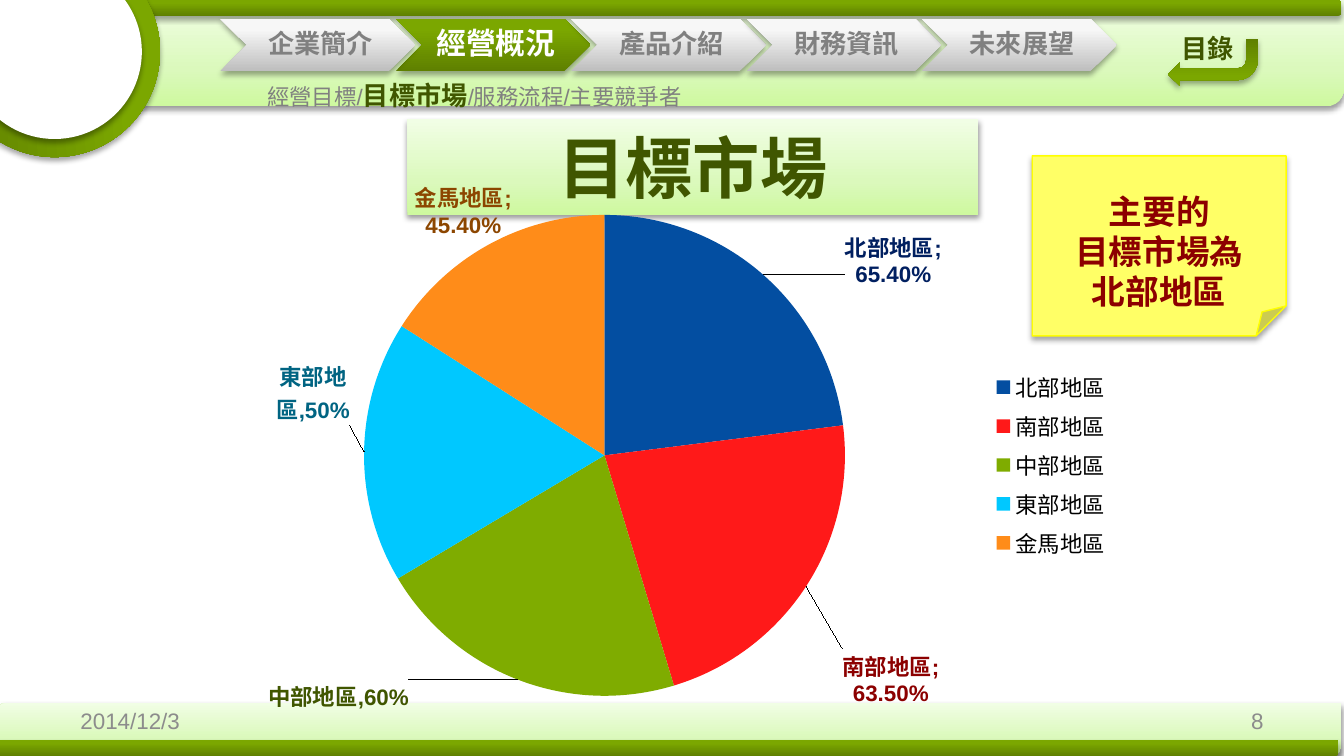
from lxml import etree
from pptx import Presentation
from pptx.chart.data import CategoryChartData
from pptx.dml.color import RGBColor
from pptx.enum import chart as ch, shapes, text
from pptx.oxml import parse_xml
from pptx.oxml.ns import nsdecls, qn
from pptx.util import Pt

WHITE = RGBColor(0xFF, 0xFF, 0xFF)
BLACK = RGBColor(0, 0, 0)
GREY = RGBColor(0x80, 0x80, 0x80)
PALE = RGBColor(0x8C, 0x8C, 0x8C)
MOSS = RGBColor(0x40, 0x56, 0x00)
WINE = RGBColor(0x8C, 0x00, 0x00)
NOTE = RGBColor(0xFF, 0xFF, 0x66)
EDGE = RGBColor(0xFF, 0xFF, 0x00)

GREEN = [(0, RGBColor(0x5F, 0x80, 0x00)), (80, RGBColor(0x7B, 0xA7, 0x00)),
         (100, RGBColor(0x7C, 0xA7, 0x00))]
SILVER = [(0, RGBColor(0xBE, 0xBE, 0xBE)), (80, RGBColor(0xF7, 0xF7, 0xF7)),
          (100, RGBColor(0xF8, 0xF8, 0xF8))]
LIGHT = [(0, RGBColor(0xCE, 0xF9, 0x9F)), (35, RGBColor(0xDB, 0xF9, 0xBC)),
         (100, RGBColor(0xF1, 0xFE, 0xE5))]

ZONES = [
    ("北部地區", 0.654, RGBColor(0x03, 0x4E, 0xA1), RGBColor(0x00, 0x1F, 0x60), (0.085, 0.03), None),
    ("南部地區", 0.635, RGBColor(0xFF, 0x19, 0x19), WINE, (0.033, 0.097), None),
    ("中部地區", 0.6, RGBColor(0x7F, 0xAC, 0x00), MOSS, (-0.118, -0.013), "中部地區,\v60%"),
    ("東部地區", 0.5, RGBColor(0x00, 0xC8, 0xFF), RGBColor(0x00, 0x64, 0x82), (-0.007, -0.1), "東部地區,\v50%"),
    ("金馬地區", 0.454, RGBColor(0xFF, 0x8C, 0x19), RGBColor(0x8C, 0x46, 0x00), (0.03, 0), None),
]
MENU = ["企業簡介", "經營概況", "產品介紹", "財務資訊", "未來展望"]
KIND = shapes.MSO_SHAPE
ALIGN = text.PP_ALIGN


def style(font, size, color, bold=False):
    """Set face, size, colour and weight of a font."""
    font.name, font.size, font.bold = "Arial", Pt(size), bold
    font.color.rgb = color


def say(frame, words, size=12, color=GREY, bold=False, align=ALIGN.LEFT,
        anchor=text.MSO_ANCHOR.MIDDLE, inset=(7.2, 3.6, 7.2, 3.6)):
    """Add formatted words to the first paragraph of a frame."""
    frame.word_wrap = True
    frame.auto_size = text.MSO_AUTO_SIZE.NONE
    frame.vertical_anchor = anchor
    (frame.margin_left, frame.margin_top,
     frame.margin_right, frame.margin_bottom) = map(Pt, inset)
    para = frame.paragraphs[0]
    para.alignment = align
    for i, line in enumerate(words.split("\v")):
        if i:
            para.add_line_break()
        run = para.add_run()
        run.text = line
        style(run.font, size, color, bold)


def paint(shape, fill):
    """Give a shape a plain or graded fill, no line and a soft shadow."""
    props = shape.element.spPr
    shape.line.fill.background()
    if isinstance(fill, RGBColor):
        shape.fill.solid()
        shape.fill.fore_color.rgb = fill
    else:
        stops = "".join(f'<a:gs pos="{at * 1000}"><a:srgbClr val="{tone}"/></a:gs>'
                        for at, tone in fill)
        props.find(qn("a:ln")).addprevious(parse_xml(
            f'<a:gradFill {nsdecls("a")} rotWithShape="1"><a:gsLst>{stops}</a:gsLst>'
            '<a:lin ang="16200000" scaled="0"/></a:gradFill>'))
    alpha, dist = (38, 1.6) if fill is LIGHT else (35, 1.8)
    props.append(parse_xml(
        f'<a:effectLst {nsdecls("a")}><a:outerShdw blurRad="{Pt(3.1)}" dist="{Pt(dist)}" '
        'dir="5400000" rotWithShape="0"><a:srgbClr val="000000">'
        f'<a:alpha val="{alpha * 1000}"/></a:srgbClr></a:outerShdw></a:effectLst>'))


def block(slide, kind, box, fill, turn=0):
    """Add a painted preset shape in a box."""
    shape = slide.shapes.add_shape(kind, *map(Pt, box))
    shape.rotation = turn
    paint(shape, fill)
    return shape


def label(slide, box, words, **form):
    """Add a text box and return its frame."""
    frame = slide.shapes.add_textbox(*map(Pt, box)).text_frame
    say(frame, words, **form)
    return frame


def frame_bands(slide, box):
    """Place the bands and the round badge along the edges of the box."""
    x, y, w, h = box
    block(slide, KIND.ROUND_2_DIAG_RECTANGLE, (x - 1.5, y + h - 28.4, w, 28.4), LIGHT)
    block(slide, KIND.ROUND_2_DIAG_RECTANGLE, (x, y, w, 57), LIGHT)
    for left, top in ((x, y), (x - 1.5, y + h - 8.5)):
        block(slide, KIND.ROUNDED_RECTANGLE, (left, top, w - 1.5, 8.5), GREEN)
    for size, fill in ((113, GREEN), (93.6, WHITE)):
        block(slide, KIND.OVAL, (x + 29.2 - size / 2, y + 27.7 - size / 2, size, size), fill, 86)


def menu(slide, box, live):
    """Place a row of chevrons in the box, the live one at the back."""
    x, y, w, h = box
    step, tip = 93.96, 14.1
    wide = w - step * (len(MENU) - 1)
    for i in sorted(range(len(MENU)), key=lambda n: n != live):
        left, on = x + i * step, i == live
        dots = [(left + wide - tip, y), (left + wide, y + h / 2),
                (left + wide - tip, y + h), (left, y + h), (left + tip, y + h / 2)]
        pen = slide.shapes.build_freeform(Pt(left), Pt(y))
        pen.add_line_segments([(Pt(a), Pt(b)) for a, b in dots], close=True)
        shape = pen.convert_to_shape()
        paint(shape, GREEN if on else SILVER)
        say(shape.text_frame, MENU[i], size=16 if on else 14, color=WHITE if on else GREY,
            bold=True, align=ALIGN.CENTER, inset=(19, 1.4, 16, 1.4))
        shape.text_frame.paragraphs[0].line_spacing = 0.9


def index(slide, box):
    """Place the contents link with its bent arrow in the box."""
    x, y, w, h = box
    block(slide, KIND.BENT_ARROW, (x, y + 7.2, 48.2, h - 7.2), GREEN, 180)
    label(slide, (x, y, w, 24.5), "目錄", size=14, color=MOSS, bold=True,
          anchor=text.MSO_ANCHOR.TOP)


def heading(slide, box):
    """Shape the title placeholder as a rounded panel in the box."""
    title = slide.shapes.title
    title.left, title.top, title.width, title.height = map(Pt, box)
    title.element.spPr.append(parse_xml(
        f'<a:prstGeom {nsdecls("a")} prst="roundRect"><a:avLst/></a:prstGeom>'))
    paint(title, LIGHT)
    say(title.text_frame, "目標市場", size=36, color=MOSS, bold=True, align=ALIGN.CENTER)
    title.element.getparent().append(title.element)


def layout(x, y, w=None, h=None):
    """Return a manual chart layout, as an inner plot if it has a size."""
    sized = w is not None
    parts = [("layoutTarget", "inner"), ("xMode", "edge"), ("yMode", "edge")] if sized else []
    parts += [("x", x), ("y", y)] + ([("w", w), ("h", h)] if sized else [])
    node = etree.Element(qn("c:layout"))
    hand = etree.SubElement(node, qn("c:manualLayout"))
    for tag, val in parts:
        etree.SubElement(hand, qn("c:" + tag)).set("val", str(val))
    return node


def pie(slide, box):
    """Place the market pie with its legend and labels in the box."""
    data = CategoryChartData(number_format="0.00%")
    data.categories = [zone[0] for zone in ZONES]
    data.add_series("Series 1", [zone[1] for zone in ZONES])
    chart = slide.shapes.add_chart(ch.XL_CHART_TYPE.PIE, *map(Pt, box), data).chart
    style(chart.font, 18, BLACK)
    chart.has_title = False
    chart.has_legend = True
    chart.legend.position = ch.XL_LEGEND_POSITION.RIGHT
    chart.legend.include_in_layout = False
    style(chart.legend.font, 12, BLACK)
    area = chart.element.find(".//" + qn("c:plotArea"))
    for old in area.findall(qn("c:layout")):
        area.remove(old)
    area.insert(0, layout(0.072, 0.081, 0.698, 0.806))
    series = chart.plots[0].series[0]
    for i, (name, value, fill, ink, shift, words) in enumerate(ZONES):
        point = series.points[i]
        point.format.fill.solid()
        point.format.fill.fore_color.rgb = fill
        tag = point.data_label
        if words:
            say(tag.text_frame, words, color=ink, bold=True, align=ALIGN.CENTER)
        else:
            style(tag.font, 12, ink, True)
        tag.position = ch.XL_LABEL_POSITION.OUTSIDE_END
        node = chart.element.findall(".//" + qn("c:dLbl"))[i]
        node.find(qn("c:showCatName")).set("val", "1")
        node.insert(1, layout(*shift))
        if not words:
            form = etree.Element(qn("c:numFmt"), formatCode="0.00%", sourceLinked="0")
            node.insert(2, form)
            etree.SubElement(node, qn("c:separator")).text = ";\n"


def trail(slide, box):
    """Write the section trail in the box."""
    frame = label(slide, box, "經營目標/")
    say(frame, "目標市場", size=14, color=MOSS, bold=True)
    say(frame, "/服務流程/主要競爭者", anchor=text.MSO_ANCHOR.TOP)


def memo(slide, box):
    """Place the folded note in the box."""
    note = block(slide, KIND.FOLDED_CORNER, box, NOTE)
    note.line.color.rgb = EDGE
    note.line.width = Pt(0.75)
    say(note.text_frame, "主要的\v目標市場為\v北部地區", size=18, color=WINE, bold=True,
        align=ALIGN.CENTER, inset=(7.2, 25, 7.2, 3.6))


def footer(slide, box):
    """Write the date and the page number at the ends of the box."""
    x, y, w, h = box
    label(slide, (x, y, 168, h), "2014/12/3", color=PALE)
    label(slide, (x + w - 168, y, 168, h), "8", color=PALE, align=ALIGN.RIGHT)


def main():
    """Build the slide and save it."""
    deck = Presentation()
    deck.slide_width, deck.slide_height = Pt(720), Pt(405)
    slide = deck.slides.add_slide(deck.slide_layouts[5])
    frame_bands(slide, (0, 0, 720, 405))
    menu(slide, (118.1, 10.1, 480.2, 28), live=1)
    index(slide, (625.7, 13.7, 67, 32.4))
    footer(slide, (36, 375, 648, 21.6))
    heading(slide, (218.2, 64, 306, 51))
    pie(slide, (121.7, 89.3, 480.2, 319.7))
    trail(slide, (136, 39, 547, 24.5))
    memo(slide, (553, 83.5, 136, 96.5))
    deck.save("out.pptx")


if __name__ == "__main__":
    main()
